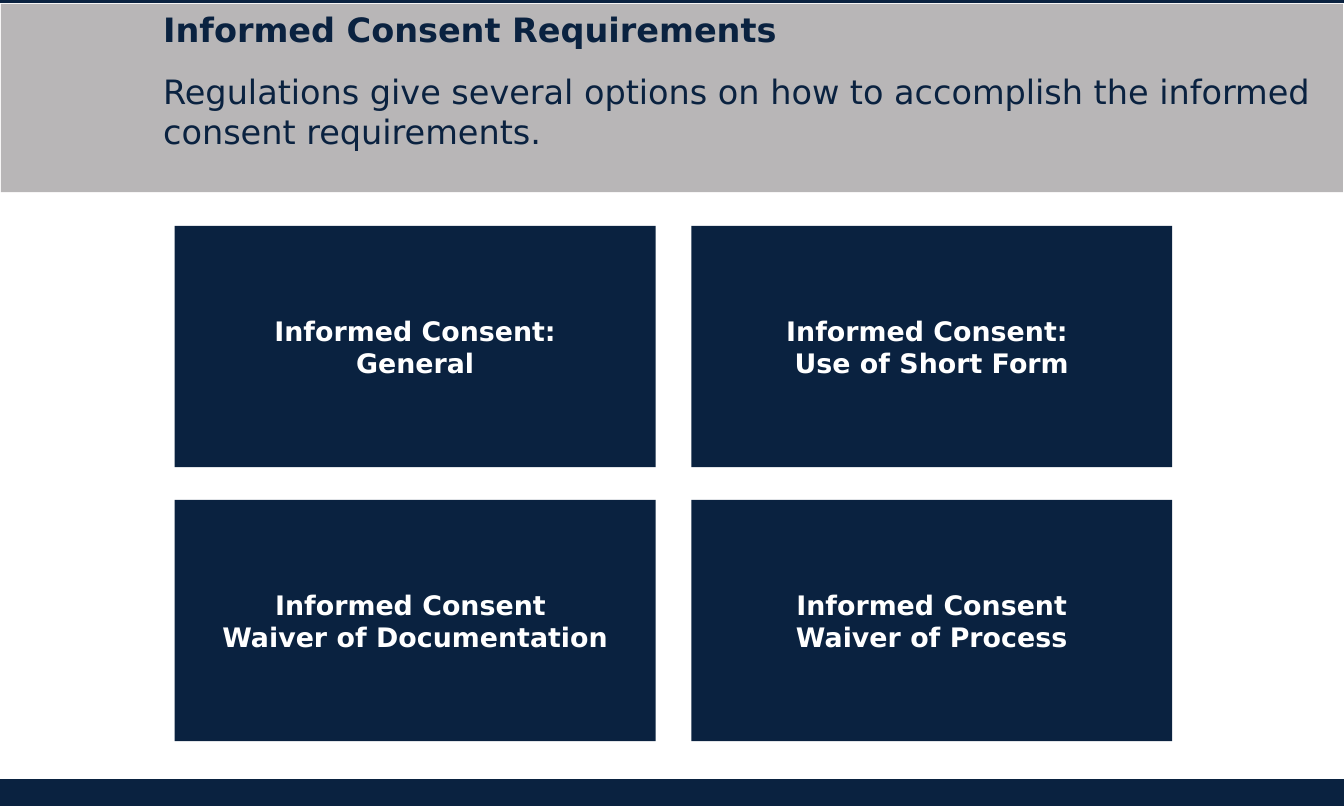
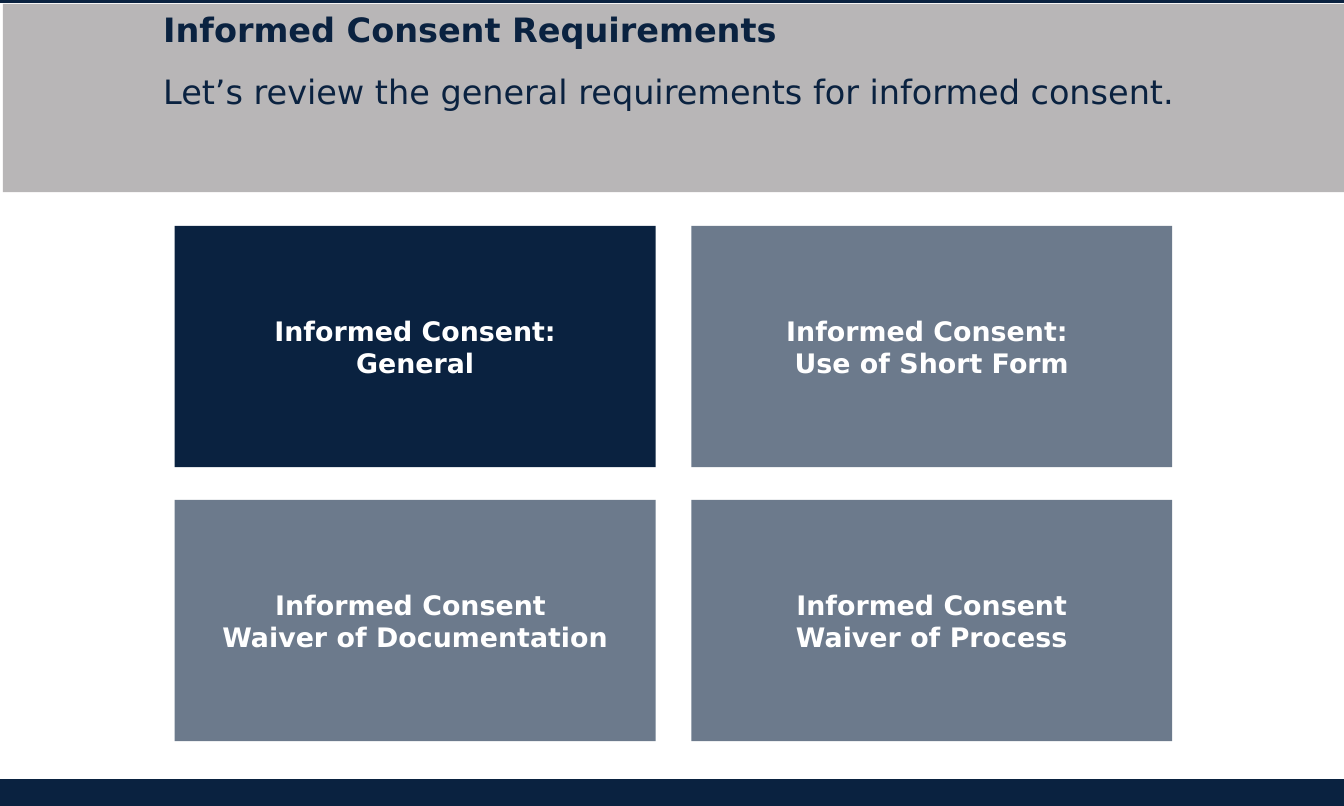
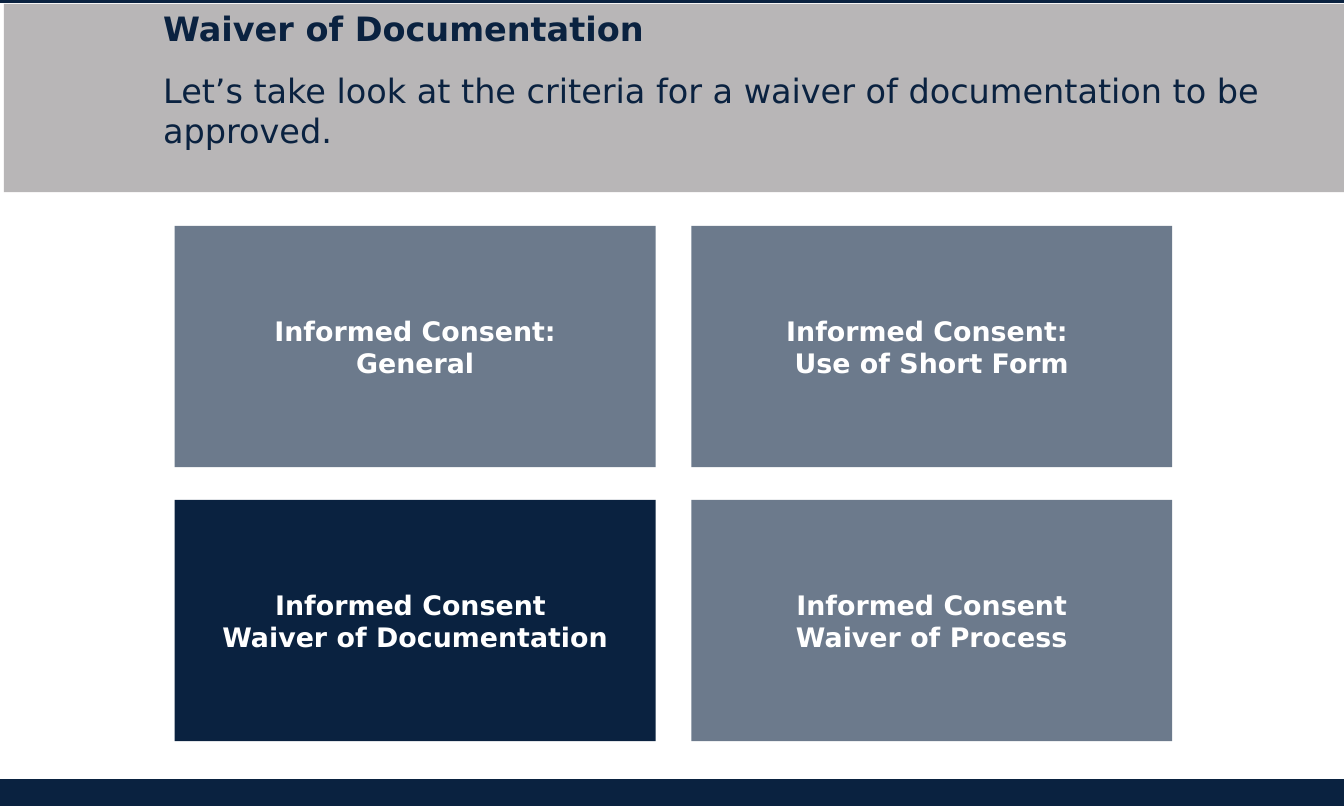
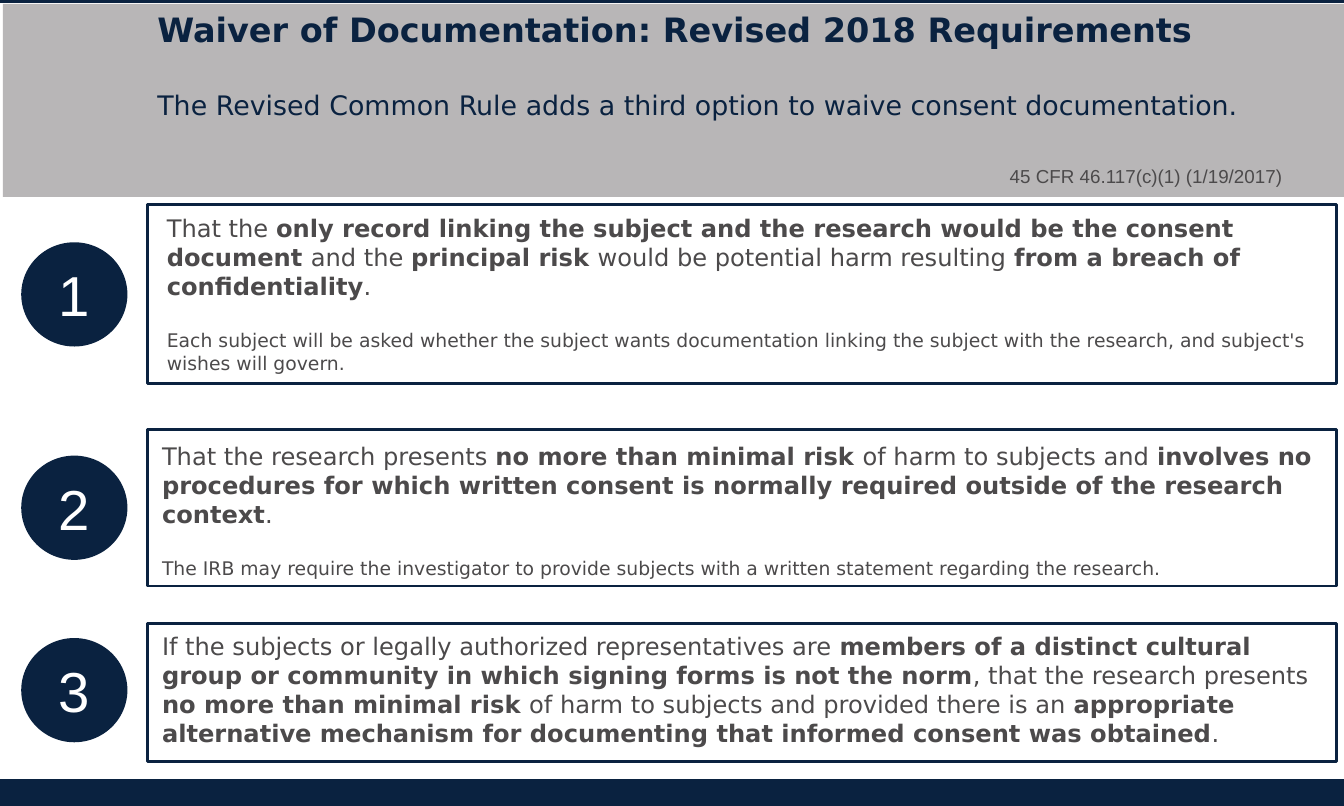
import pptx
import pptx.dml.color
import pptx.enum.shapes
import pptx.enum.text
import pptx.oxml
import pptx.oxml.ns
import pptx.util

W, H = 13.92, 8.35
COLORS = {"navy": "0A2240", "band": "B8B6B7", "white": "FFFFFF", "body": "4C4A4B"}
FONT, PLAIN_FONT = "DejaVu Sans", "Arial"
RECT = pptx.enum.shapes.MSO_SHAPE.RECTANGLE
OVAL = pptx.enum.shapes.MSO_SHAPE.OVAL
CENTER = pptx.enum.text.PP_ALIGN.CENTER
MIDDLE = pptx.enum.text.MSO_ANCHOR.MIDDLE

TILES = [
    ("Informed Consent:", "General"),
    ("Informed Consent: ", "Use of Short Form"),
    ("Informed Consent ", "Waiver of Documentation"),
    ("Informed Consent", "Waiver of Process"),
]
TILE_LEFT, TILE_TOP, TILE_W, TILE_H = 1.81, 2.34, 4.98, 2.5
COL_STEP, ROW_STEP = 5.35, 2.84
DIMMED_ALPHA = 60

MENUS = [
    {"title": "Informed Consent Requirements",
     "subtitle": "Regulations give several options on how to accomplish "
                 "the informed consent requirements.",
     "band_left": 0.01, "top": 0.09, "active": (0, 1, 2, 3)},
    {"title": "Informed Consent Requirements",
     "subtitle": "Let’s review the general requirements for informed consent.",
     "band_left": 0.03, "top": 0.09, "active": (0,)},
    {"title": "Waiver of Documentation",
     "subtitle": "Let’s take look at the criteria for a waiver of "
                 "documentation to be approved.",
     "band_left": 0.04, "top": 0.08, "active": (2,)},
]

REVISED_TITLE = "Waiver of Documentation: Revised 2018 Requirements"
REVISED_SUBTITLE = "The Revised Common Rule adds a third option to waive consent documentation."
CITATION = "45 CFR 46.117(c)(1) (1/19/2017)"

# "runs" alternate between regular and bold, starting with regular
CRITERIA = [
    {"top": 2.12, "height": 1.85, "circle_top": 2.51, "text_at": (1.63, 2.16),
     "runs": ["That the ",
              "only record linking the subject and the research would be the consent document ",
              "and the ", "principal risk ",
              "would be potential harm resulting ",
              "from a breach of confidentiality", "."],
     "note": "Each subject will be asked whether the subject wants documentation linking "
             "the subject with the research, and subject's wishes will govern."},
    {"top": 4.45, "height": 1.62, "circle_top": 4.72, "text_at": (1.58, 4.52),
     "runs": ["That the research presents ", "no more than minimal risk ",
              "of harm to subjects and ",
              "involves no procedures for which written consent is normally required "
              "outside of the research context", "."],
     "note": "The IRB may require the investigator to provide subjects with a written "
             "statement regarding the research."},
    {"top": 6.46, "height": 1.43, "circle_top": 6.61, "text_at": (1.58, 6.49),
     "runs": ["If the subjects or legally authorized representatives are ",
              "members of a distinct cultural group or community in which signing forms "
              "is not the norm",
              ", that the research presents ", "no more than minimal risk ",
              "of harm to subjects and provided there is an ",
              "appropriate alternative mechanism for documenting that informed consent "
              "was obtained", "."],
     "note": None},
]


def rgb(name):
    return pptx.dml.color.RGBColor.from_string(COLORS[name])


def inches(*values):
    return [pptx.util.Inches(v) for v in values]


def add_box(slide, kind, box, fill=None, line=None, weight=0, alpha=None):
    sp = slide.shapes.add_shape(kind, *inches(*box))
    sp.shadow.inherit = False
    if fill:
        sp.fill.solid()
        sp.fill.fore_color.rgb = rgb(fill)
    else:
        sp.fill.background()
    if alpha:
        clr = sp.element.find(".//" + pptx.oxml.ns.qn("a:srgbClr"))
        clr.append(pptx.oxml.parse_xml(
            f'<a:alpha {pptx.oxml.ns.nsdecls("a")} val="{alpha * 1000}"/>'))
    if line:
        sp.line.color.rgb = rgb(line)
        sp.line.width = pptx.util.Pt(weight)
    else:
        sp.line.fill.background()
    return sp


def add_text(slide, box, inset=True):
    tf = slide.shapes.add_textbox(*inches(*box)).text_frame
    tf.word_wrap = True
    if not inset:
        tf.margin_left = tf.margin_top = tf.margin_right = tf.margin_bottom = 0
    return tf


def write(tf, runs, size, color, font=FONT, bold=None, before=0, align=None):
    p = tf.paragraphs[0]
    if p.runs:
        p = tf.add_paragraph()
    p.font.size, p.font.name, p.font.bold = pptx.util.Pt(size), font, bold
    p.font.color.rgb = rgb(color)
    if before:
        p.space_before = pptx.util.Pt(before)
    if align is not None:
        p.alignment = align
    for i, text in enumerate(runs):
        r = p.add_run()
        r.text = text
        if i % 2:
            r.font.bold = True


def add_centered(sp, lines, size, font=FONT, bold=None):
    tf = sp.text_frame
    tf.vertical_anchor = MIDDLE
    for line in lines:
        write(tf, [line], size, "white", font, bold, align=CENTER)


def add_frame(layout, slide):
    for top, height, fill in ((0, 8.11, "white"), (8.1, 0.31, "navy")):
        sp = add_box(slide, RECT, (-0.03, top, 14, height), fill, "navy", 4.5)
        layout.shapes.element.append(sp.element)


def add_header(slide, title, subtitle, band, box, size=25, gap=16.5):
    add_box(slide, RECT, band, "band")
    tf = add_text(slide, box, inset=False)
    write(tf, [title], 25, "navy", bold=True)
    write(tf, [subtitle], size, "navy", before=gap)


def build_menu(slide, menu):
    add_header(slide, menu["title"], menu["subtitle"],
               (menu["band_left"], 0.04, 13.9, 1.95), (1.69, menu["top"], 12.19, 1.5))
    for i, lines in enumerate(TILES):
        row, col = divmod(i, 2)
        box = (TILE_LEFT + col * COL_STEP, TILE_TOP + row * ROW_STEP, TILE_W, TILE_H)
        alpha = None if i in menu["active"] else DIMMED_ALPHA
        add_centered(add_box(slide, RECT, box, "navy", alpha=alpha), lines, 20, bold=True)


def build_criteria(slide):
    add_header(slide, REVISED_TITLE, REVISED_SUBTITLE,
               (0.03, 0.04, 13.9, 2), (1.63, 0.09, 12.28, 1.18), size=20, gap=30)
    write(add_text(slide, (10.36, 1.66, 3.5, 0.34)), [CITATION], 14, "body", PLAIN_FONT)
    for number, item in enumerate(CRITERIA, 1):
        add_box(slide, RECT, (1.53, item["top"], 12.31, item["height"]),
                line="navy", weight=2)
        tf = add_text(slide, (*item["text_at"], 12.2, item["height"] - 0.1))
        write(tf, item["runs"], 18, "body")
        if item["note"]:
            write(tf, [item["note"]], 14, "body", before=21.5)
        circle = add_box(slide, OVAL, (0.22, item["circle_top"], 1.1, 1.08), "navy")
        add_centered(circle, [str(number)], 42, PLAIN_FONT)


def main():
    prs = pptx.Presentation()
    prs.slide_width, prs.slide_height = inches(W, H)
    blank = prs.slide_layouts[6]
    slides = [prs.slides.add_slide(blank) for _ in range(len(MENUS) + 1)]
    add_frame(blank, slides[0])
    for slide, menu in zip(slides, MENUS):
        build_menu(slide, menu)
    build_criteria(slides[-1])
    prs.save("out.pptx")


if __name__ == "__main__":
    main()
